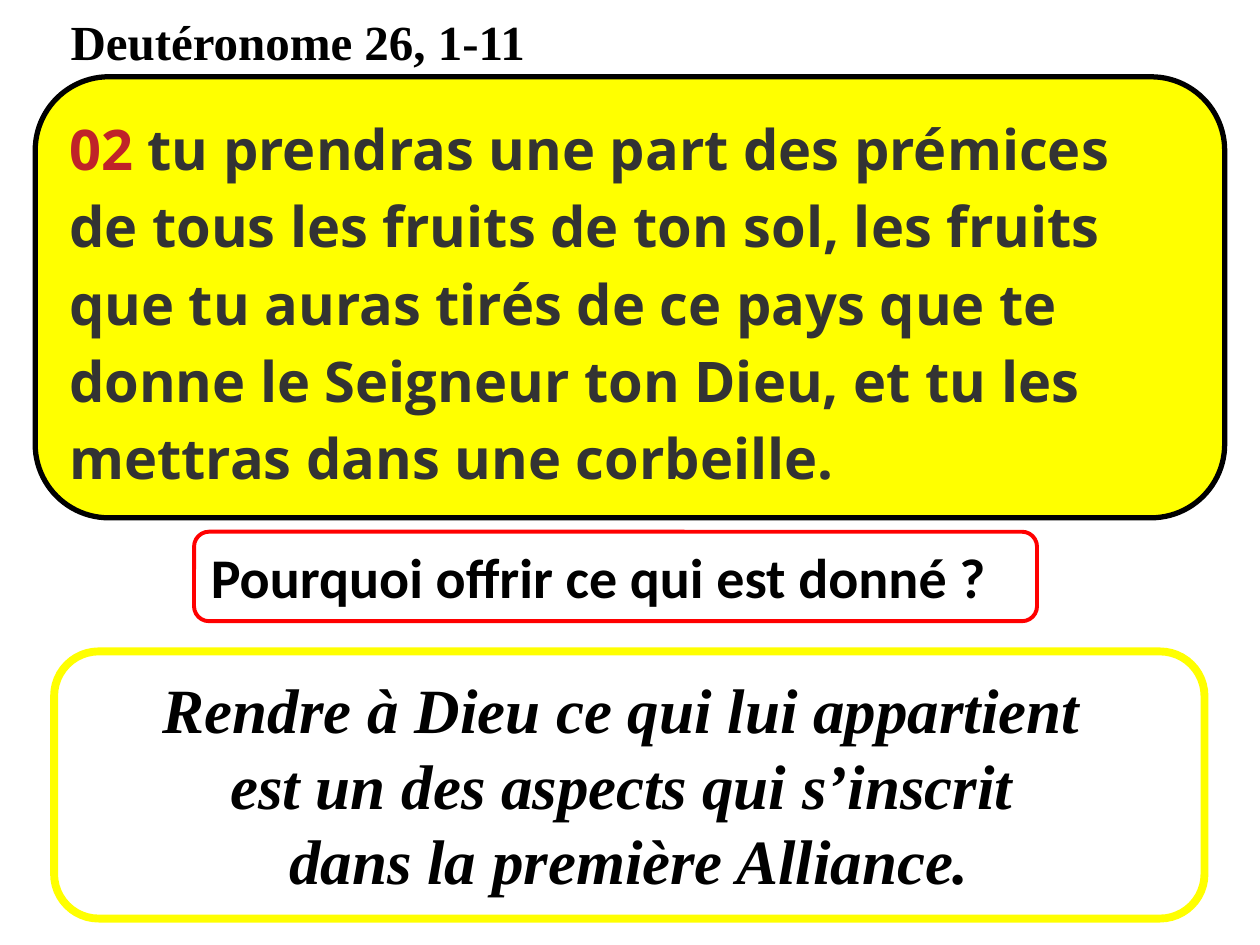
from dataclasses import dataclass
from typing import Optional

from pptx import Presentation, util as u
from pptx.dml.color import RGBColor
from pptx.enum import shapes, text


@dataclass(frozen=True)
class TextStyle:
    font: str
    size: int
    color: str = "000000"
    italic: bool = False
    align: text.PP_ALIGN = text.PP_ALIGN.LEFT


@dataclass(frozen=True)
class Panel:
    bounds: tuple[float, float, float, float]
    line: str
    weight: float
    style: TextStyle
    # Each paragraph is a list of (wording, colour override) spans
    paragraphs: list[list[tuple[str, Optional[str]]]]
    fill: Optional[str] = None
    line_spacing: Optional[float] = None
    space_after: float = 0


def rgb(value: str) -> RGBColor:
    return RGBColor.from_string(value)


def style_paragraph(para, style: TextStyle) -> None:
    para.alignment = style.align
    font = para.font
    font.name, font.size = style.font, u.Pt(style.size)
    font.bold, font.italic = True, style.italic
    font.color.rgb = rgb(style.color)


def add_heading(page, wording: str) -> None:
    title = page.shapes.title
    title.left, title.top, title.width, title.height = map(
        u.Inches, (0.46, 0.04, 4.02, 0.57))
    frame = title.text_frame
    frame.text = wording
    frame.word_wrap = False
    frame.auto_size = text.MSO_AUTO_SIZE.SHAPE_TO_FIT_TEXT
    frame.vertical_anchor = text.MSO_ANCHOR.TOP
    style_paragraph(frame.paragraphs[0], TextStyle("Times New Roman", 28))


def add_panel(page, panel: Panel) -> None:
    box = page.shapes.add_shape(
        shapes.MSO_SHAPE.ROUNDED_RECTANGLE, *map(u.Inches, panel.bounds))
    box.shadow.inherit = False
    if panel.fill:
        box.fill.solid()
        box.fill.fore_color.rgb = rgb(panel.fill)
    else:
        box.fill.background()
    box.line.color.rgb = rgb(panel.line)
    box.line.width = u.Pt(panel.weight)

    frame = box.text_frame
    frame.word_wrap = True
    frame.auto_size = text.MSO_AUTO_SIZE.SHAPE_TO_FIT_TEXT
    frame.vertical_anchor = text.MSO_ANCHOR.TOP
    for index, spans in enumerate(panel.paragraphs):
        para = frame.add_paragraph() if index else frame.paragraphs[0]
        style_paragraph(para, panel.style)
        para.line_spacing = panel.line_spacing
        para.space_after = u.Pt(panel.space_after)
        for wording, color in spans:
            span = para.add_run()
            span.text = wording
            if color:
                span.font.color.rgb = rgb(color)


QUESTION = Panel(
    (1.54, 4.22, 6.69, 0.71), "FF0000", 2.25, TextStyle("Calibri", 32),
    [[("Pourquoi offrir ce qui est donné ?", None)]])

VERSE = Panel(
    (0.28, 0.61, 9.44, 3.5), "000000", 3,
    TextStyle("Open Sans", 32, "333333"),
    [[("02", "BF2329"),
      (" tu prendras une part des prémices de tous les fruits de ton sol, "
       "les fruits que tu auras tirés de ce pays que te donne le Seigneur "
       "ton Dieu, et tu les mettras dans une corbeille.", None)]],
    fill="FFFF00", line_spacing=1.15, space_after=10)

ANSWER = Panel(
    (0.43, 5.17, 9.13, 2.12), "FFFF00", 4.5,
    TextStyle("Times New Roman", 36, italic=True, align=text.PP_ALIGN.CENTER),
    [[("Rendre à Dieu ce qui lui appartient ", None)],
     [("est un des aspects qui s’inscrit ", None)],
     [("dans la première Alliance.", None)]])


def main() -> None:
    deck = Presentation()
    deck.slide_width, deck.slide_height = u.Inches(10), u.Inches(7.5)
    page = deck.slides.add_slide(deck.slide_layouts[5])  # Title Only

    # Bible reference, then the three framed texts
    add_heading(page, "Deutéronome 26, 1-11")
    for panel in (QUESTION, VERSE, ANSWER):
        add_panel(page, panel)

    deck.save("out.pptx")


if __name__ == "__main__":
    main()
